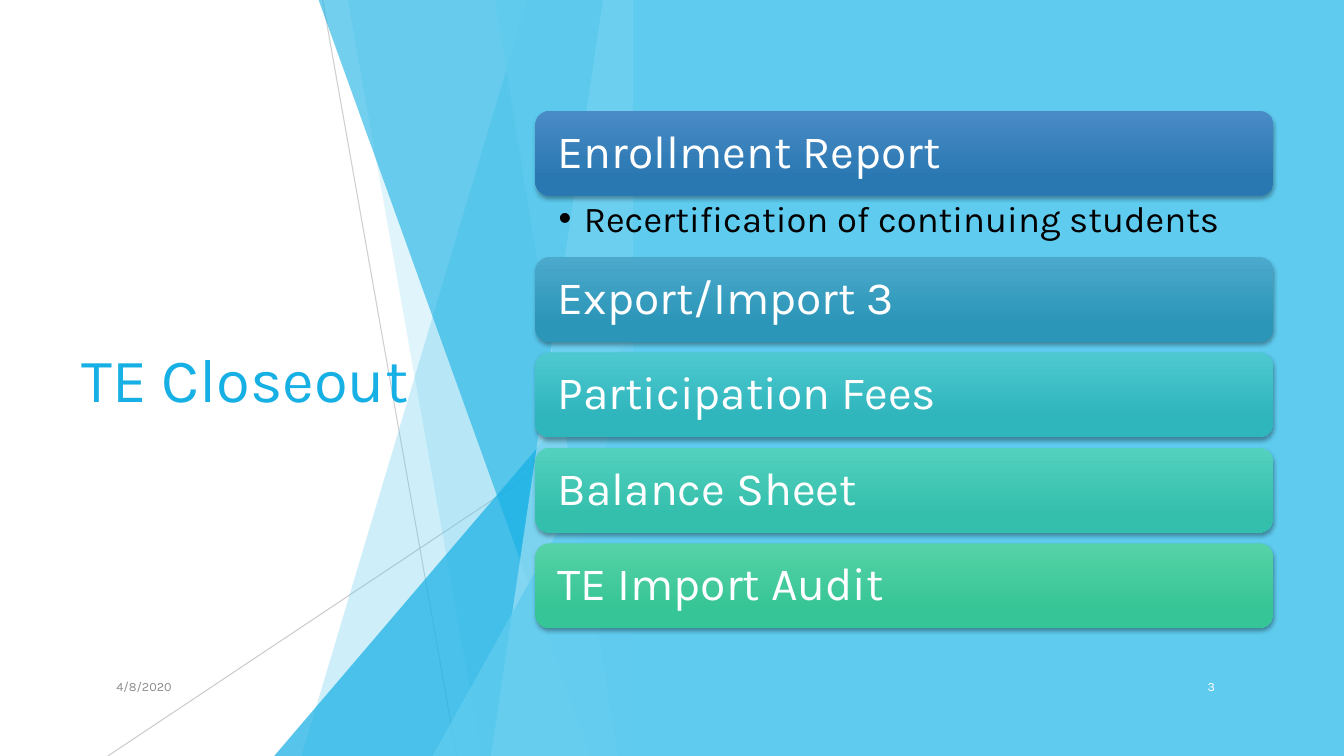
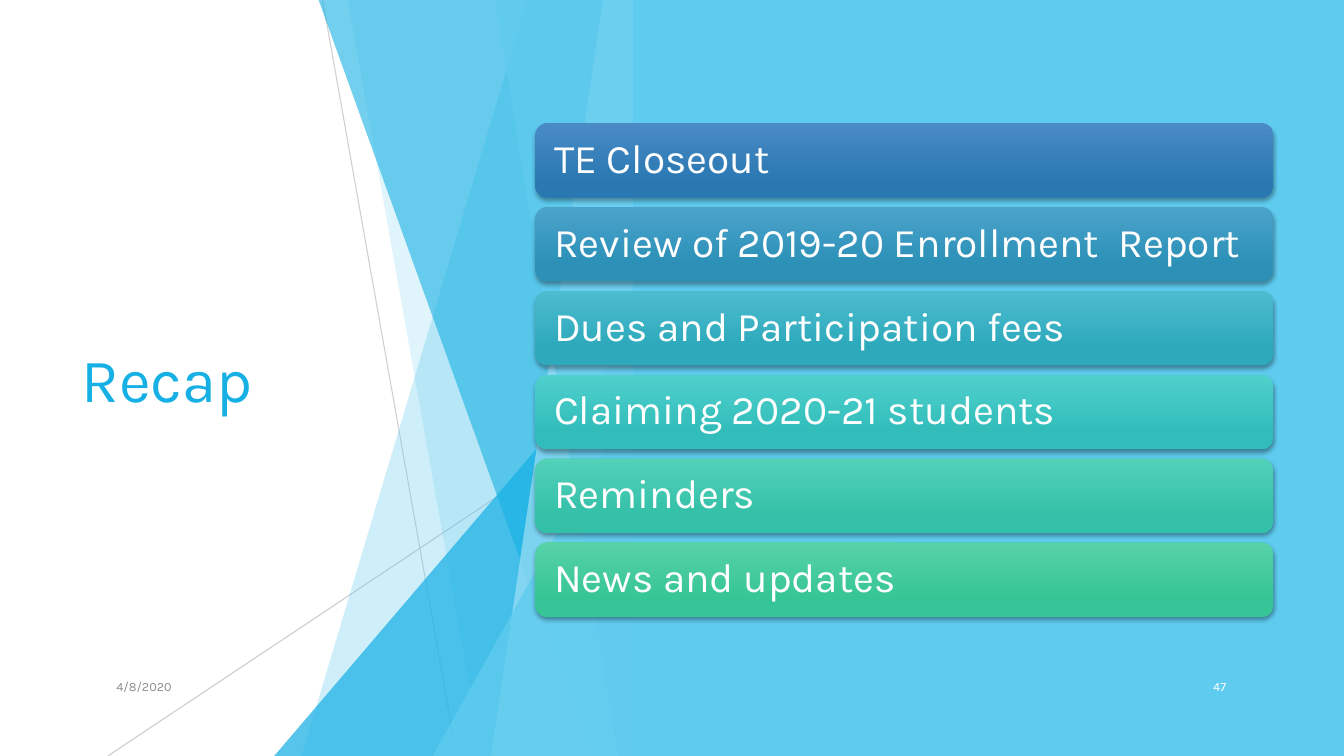
from lxml.etree import SubElement
from pptx import Presentation
from pptx.dml.color import RGBColor
from pptx.enum.shapes import MSO_CONNECTOR, MSO_SHAPE
from pptx.enum.text import MSO_ANCHOR, MSO_AUTO_SIZE, PP_ALIGN
from pptx.oxml.ns import qn
from pptx.util import Emu, Pt

PX = 9144
SLIDE_W, SLIDE_H = 1333, 750
PANEL_X = 628
FONT = "Karla"
COLORS = {
    "white": "FFFFFF", "black": "000000", "date": "8C8C8C", "rule": "BFBFBF",
    "accent": "17B0E4", "sky": "5FCBEF", "pale": "9FE0F5",
    "blue": "4A8BC6", "blue_deep": "2A78B2",
    "azure": "4BA9CC", "azure_deep": "2C96B8",
    "cerulean": "4BA3CB", "cerulean_deep": "2C90B7",
    "cyan": "4DC8D0", "cyan_deep": "2FB5BC",
    "lagoon": "4CBCCF", "lagoon_deep": "2DA9BB",
    "turquoise": "4FD0CD", "turquoise_deep": "32BDBA",
    "teal": "52D1BE", "teal_deep": "34BFAC",
    "jade": "53D1B9", "jade_deep": "34C0A8",
    "green": "56D2A7", "green_deep": "36C596",
}
RULES = [((308, 0), (175, 750), 75), ((0, 403), (521, 750), 80)]
FACETS = [
    ("band", 105, 329, "sky", 30),
    ("band", 283, 150, "sky", 20),
    ("wedge", 356, 417, "accent", 72),
    ("band", 312, 42, "accent", 60),
    ("band", 30, 141, "pale", 70),
    ("band", 137, 15, "sky", 65),
    ("wedge", 199, 357, "sky", 80),
]
SLIDES = [
    dict(title="TE Closeout", number="3", number_w=64,
         box=(531, 110, 732, 513), bar_h=84, inset=18, size=33,
         items=[("Enrollment Report", "blue"), ("Export/Import 3", "azure"),
                ("Participation Fees", "cyan"), ("Balance Sheet", "teal"),
                ("TE Import Audit", "green")],
         note="Recertification of continuing students"),
    dict(title="Recap", number="47", number_w=75,
         box=(531, 122, 732, 490), bar_h=74, inset=15, size=29,
         items=[("TE Closeout", "blue"),
                ("Review of 2019-20 Enrollment  Report", "cerulean"),
                ("Dues and Participation fees", "lagoon"),
                ("Claiming 2020-21 students", "turquoise"),
                ("Reminders", "jade"), ("News and updates", "green")]),
]
NOTE_H = 61


def px(*lengths):
    """Turn px lengths into a list of EMU lengths."""
    return [Emu(round(n * PX)) for n in lengths]


def rgb(name):
    """Look up a colour by name."""
    return RGBColor.from_string(COLORS[name])


def set_alpha(shape, percent):
    """Make the colours of a shape partly transparent."""
    for clr in shape.element.iter(qn("a:srgbClr")):
        SubElement(clr, qn("a:alpha"), val=str(percent * 1000))


def paint(sp, color):
    """Give a shape a plain fill without line or shadow."""
    sp.shadow.inherit = False
    sp.fill.solid()
    sp.fill.fore_color.rgb = rgb(color)
    sp.line.fill.background()


def write(sp, text, size, color, align=PP_ALIGN.LEFT, anchor=MSO_ANCHOR.MIDDLE):
    """Put one formatted paragraph into a shape and return it."""
    tf = sp.text_frame
    tf.text = text
    tf.word_wrap = True
    tf.auto_size = MSO_AUTO_SIZE.NONE
    tf.vertical_anchor = anchor
    p = tf.paragraphs[0]
    p.alignment = align
    font = p.runs[0].font
    font.name, font.size, font.color.rgb = FONT, Pt(size), rgb(color)
    return p


def place(sp, box):
    """Move a placeholder to a box and bring it to the front."""
    sp.left, sp.top, sp.width, sp.height = px(*box)
    sp.element.getparent().append(sp.element)


def add_small_text(s, box, text, color):
    """Add a right-aligned date or page number."""
    write(s.shapes.add_textbox(*px(*box)), text, 9, color, PP_ALIGN.RIGHT)


def add_facets(s, box):
    """Draw the thin rules and translucent facets against the right edge of a box."""
    left, top, width, height = box
    right, bottom = left + width, top + height
    for (x1, y1), (x2, y2), alpha in RULES:
        line = s.shapes.add_connector(
            MSO_CONNECTOR.STRAIGHT,
            *px(right - x1, top + y1, right - x2, top + y2))
        line.line.color.rgb = rgb("rule")
        line.line.width = Pt(0.75)
        set_alpha(line, alpha)
        SubElement(line.element.spPr, qn("a:effectLst"))
    for kind, a, b, color, alpha in FACETS:
        if kind == "band":
            outline = s.shapes.build_freeform(right - a, top, scale=PX)
            outline.add_line_segments(
                [(right, top), (right, bottom), (right - b, bottom)])
            sp = outline.convert_to_shape()
        else:
            sp = s.shapes.add_shape(MSO_SHAPE.ISOSCELES_TRIANGLE,
                                    *px(right - a, bottom - b, a, b))
            sp.adjustments[0] = 1
        paint(sp, color)
        set_alpha(sp, alpha)


def add_bar(s, box, text, color, inset, size):
    """Add one rounded gradient bar with its label."""
    sp = s.shapes.add_shape(MSO_SHAPE.ROUNDED_RECTANGLE, *px(*box))
    sp.fill.gradient()
    sp.fill.gradient_angle = 270
    for stop, name, position in zip(sp.fill.gradient_stops,
                                    (color, color + "_deep"), (0, 0.78)):
        stop.color.rgb = rgb(name)
        stop.position = position
    sp.line.fill.background()
    sp.shadow.inherit = False
    shadow = SubElement(sp.element.spPr.find(qn("a:effectLst")), qn("a:outerShdw"),
                        blurRad=str(Pt(3)), dist=str(Pt(2)), dir="5400000",
                        algn="ctr", rotWithShape="0")
    clr = SubElement(shadow, qn("a:srgbClr"), val=COLORS["black"])
    SubElement(clr, qn("a:alpha"), val="35000")
    p = write(sp, text, size, "white")
    p.line_spacing = 0.9
    tf = sp.text_frame
    tf.margin_left, tf.margin_right = px(inset, inset)


def add_note(s, box, text):
    """Set the body placeholder as a bullet under a bar."""
    sp = s.placeholders[1]
    place(sp, box)
    p = write(sp, text, 26, "black", anchor=MSO_ANCHOR.TOP)
    p.line_spacing = 0.9
    p.space_before = Pt(0)
    tf = sp.text_frame
    tf.margin_left, tf.margin_top, tf.margin_right, tf.margin_bottom = px(23, 5, 26, 5)
    indent = px(25)[0]
    pPr = p._p.get_or_add_pPr()
    pPr.set("marL", str(indent))
    pPr.set("indent", str(-indent))


def add_bars(s, box, items, bar_h, inset, size, note=None):
    """Stack the bars evenly in a box, with an optional note after the first."""
    left, top, width, height = box
    notes = 1 if note else 0
    gap = (height - len(items) * bar_h - notes * NOTE_H) / (len(items) - 1 - notes)
    y = top
    for i, (text, color) in enumerate(items):
        add_bar(s, (left, y, width, bar_h), text, color, inset, size)
        y += bar_h
        if note and i == 0:
            add_note(s, (left, y, width, NOTE_H), note)
            y += NOTE_H
        else:
            y += gap


def add_agenda_slide(prs, title, number, number_w, note=None, **bars):
    """Build one slide with a title at left and stacked bars at right."""
    s = prs.slides.add_slide(prs.slide_layouts[1 if note else 5])
    add_small_text(s, (80, 661, 100, 40), "4/8/2020", "date")
    add_facets(s, (0, 0, PANEL_X, SLIDE_H))
    place(s.shapes.title, (71, 151, 388, 448))
    write(s.shapes.title, title, 44, "accent")
    panel = s.shapes.add_shape(MSO_SHAPE.RECTANGLE,
                               *px(PANEL_X, 0, SLIDE_W - PANEL_X, SLIDE_H))
    paint(panel, "sky")
    add_small_text(s, (1151, 661, number_w, 40), number, "white")
    add_bars(s, note=note, **bars)


def main():
    """Build and save the deck."""
    prs = Presentation()
    prs.slide_width, prs.slide_height = px(SLIDE_W, SLIDE_H)
    for content in SLIDES:
        add_agenda_slide(prs, **content)
    prs.save("out.pptx")


if __name__ == "__main__":
    main()
